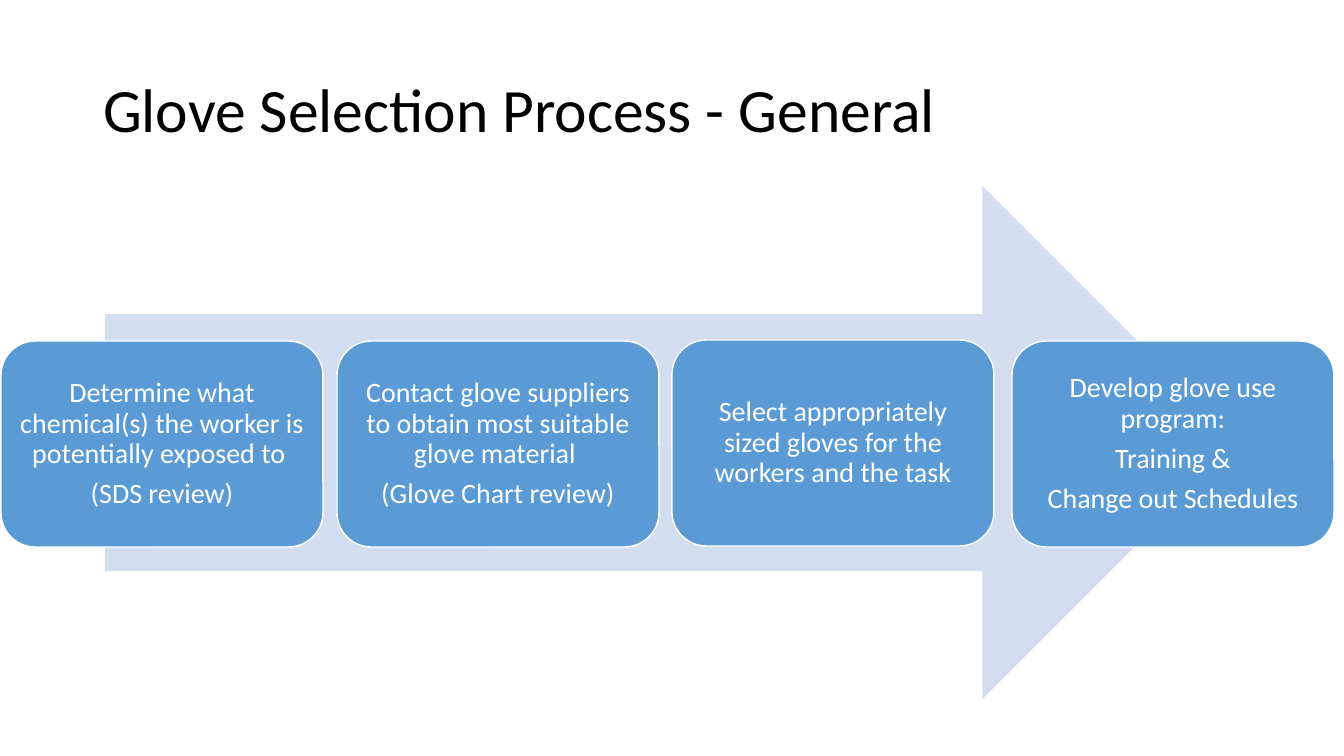
from pptx import Presentation
from pptx import util as u
from pptx.dml.color import RGBColor
from pptx.enum import shapes, text

SLIDE_W, SLIDE_H = 1344, 756
EMU_PER_PX = u.Inches(13.3333) / SLIDE_W

BLACK = RGBColor(0x00, 0x00, 0x00)
WHITE = RGBColor(0xFF, 0xFF, 0xFF)
BLUE = RGBColor(0x5B, 0x9B, 0xD5)
PALE_BLUE = RGBColor(0xD2, 0xDE, 0xEF)

STEP_W, STEP_H = 322, 206
STEPS = [
    (1, 341, ["Determine what chemical(s) the worker is potentially exposed to ",
              "(SDS review)"]),
    (337, 341, ["Contact glove suppliers to obtain most suitable glove material ",
                "(Glove Chart review)"]),
    (672, 340, ["Select appropriately sized gloves for the workers and the task"]),
    (1012, 341, ["Develop glove use program:", "Training &",
                 "Change out Schedules"]),
]


def px(n):
    return u.Emu(round(n * EMU_PER_PX))


class Deck:
    font = "Calibri"
    line_spacing = 0.9

    def __init__(self):
        self.prs = Presentation()
        self.prs.slide_width = px(SLIDE_W)
        self.prs.slide_height = px(SLIDE_H)
        self.slide = self.prs.slides.add_slide(self.prs.slide_layouts[5])

    def add_lines(self, tf, lines, size, color, align, after=0):
        """Fill a text frame with one paragraph per line."""
        tf.word_wrap = True
        tf.auto_size = text.MSO_AUTO_SIZE.NONE
        tf.vertical_anchor = text.MSO_ANCHOR.MIDDLE
        for i, line in enumerate(lines):
            p = tf.add_paragraph() if i else tf.paragraphs[0]
            p.alignment = align
            p.line_spacing = self.line_spacing
            p.space_before = u.Pt(0)
            p.space_after = u.Pt(after)
            r = p.add_run()
            r.text = line
            r.font.name = self.font
            r.font.size = u.Pt(size)
            r.font.color.rgb = color

    def title(self, line, x, y, w, h):
        sp = self.slide.shapes.title
        sp.left, sp.top, sp.width, sp.height = map(px, (x, y, w, h))
        self.add_lines(sp.text_frame, [line], 44, BLACK, text.PP_ALIGN.LEFT)

    def shape(self, kind, x, y, w, h, fill):
        sp = self.slide.shapes.add_shape(kind, *map(px, (x, y, w, h)))
        sp.shadow.inherit = False
        sp.fill.solid()
        sp.fill.fore_color.rgb = fill
        sp.line.fill.background()
        return sp

    def arrow(self, x, y, w, h):
        self.shape(shapes.MSO_SHAPE.RIGHT_ARROW, x, y, w, h, PALE_BLUE)

    def step(self, x, y, lines):
        sp = self.shape(shapes.MSO_SHAPE.ROUNDED_RECTANGLE,
                        x, y, STEP_W, STEP_H, BLUE)
        sp.line.color.rgb = WHITE
        sp.line.width = u.Pt(1)
        tf = sp.text_frame
        tf.margin_left = tf.margin_right = px(8)
        tf.margin_top = tf.margin_bottom = px(8)
        self.add_lines(tf, lines, 20, WHITE, text.PP_ALIGN.CENTER, after=7)


def main():
    deck = Deck()
    deck.title("Glove Selection Process - General", 93, 40, 1159, 146)
    deck.arrow(105, 186, 1134, 513)
    for x, y, lines in STEPS:
        deck.step(x, y, lines)
    deck.prs.save("out.pptx")


if __name__ == "__main__":
    main()
